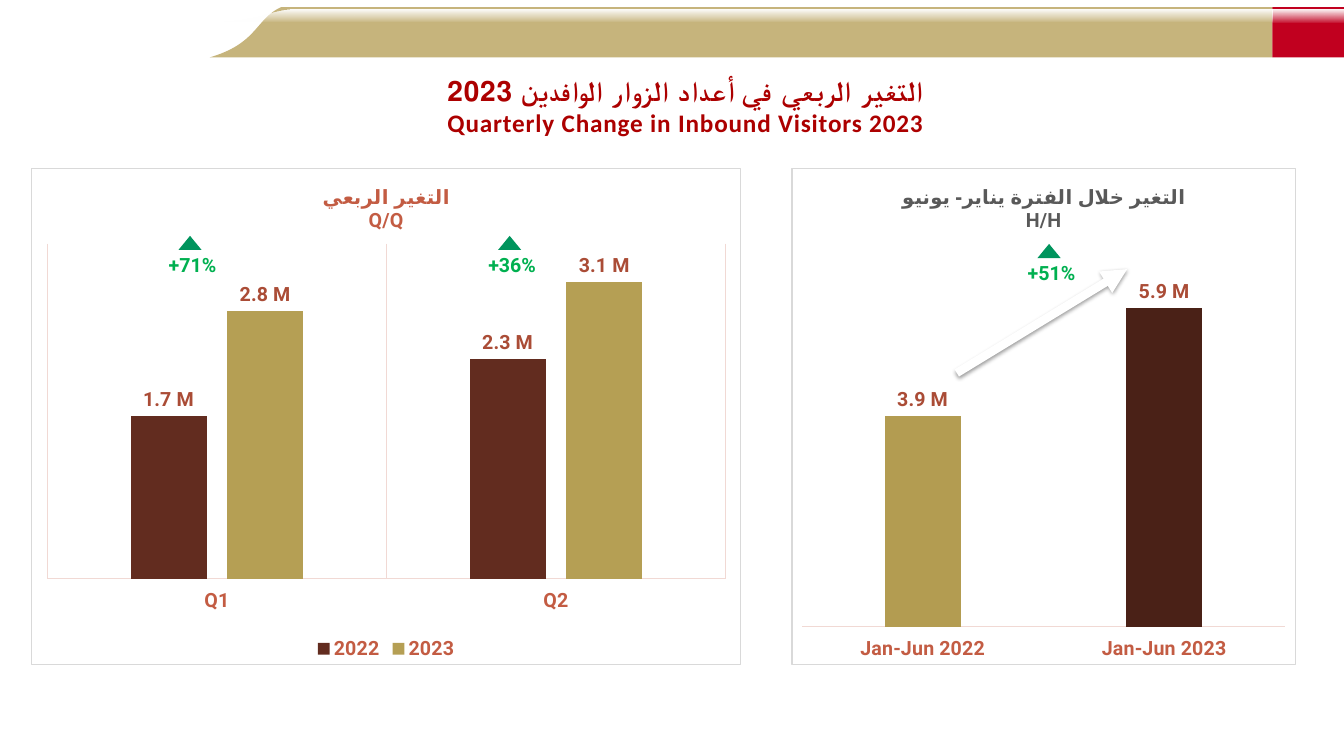
from dataclasses import dataclass
from typing import Any, Optional

from lxml import etree
from pptx import Presentation
from pptx.chart.data import CategoryChartData
from pptx.dml.color import RGBColor
from pptx.enum.chart import XL_CHART_TYPE, XL_LABEL_POSITION, XL_LEGEND_POSITION, XL_TICK_LABEL_POSITION, XL_TICK_MARK
from pptx.enum.shapes import MSO_CONNECTOR, MSO_SHAPE
from pptx.enum.text import PP_ALIGN
from pptx.oxml import parse_xml
from pptx.oxml.ns import nsdecls, qn
from pptx.util import Inches, Pt

COLUMNS = XL_CHART_TYPE.COLUMN_CLUSTERED
OUTSIDE_END = XL_LABEL_POSITION.OUTSIDE_END
BOTTOM = XL_LEGEND_POSITION.BOTTOM
LOW = XL_TICK_LABEL_POSITION.LOW
NO_TICK = XL_TICK_MARK.NONE
CENTER = PP_ALIGN.CENTER

WHITE = RGBColor(0xFF, 0xFF, 0xFF)
SAND = RGBColor(0xC6, 0xB4, 0x7C)
RED = RGBColor(0xC1, 0x00, 0x1F)
TITLE_RED = RGBColor(0xAC, 0x00, 0x00)
GREY = RGBColor(0x59, 0x59, 0x59)
RUST = RGBColor(0xC3, 0x5C, 0x43)
LABEL_RUST = RGBColor(0xAA, 0x4C, 0x36)
AXIS_PINK = RGBColor(0xF1, 0xD9, 0xD4)
BROWN = RGBColor(0x62, 0x2C, 0x1F)
DARK_BROWN = RGBColor(0x4A, 0x21, 0x17)
GOLD = RGBColor(0xB5, 0x9F, 0x54)
DARK_GOLD = RGBColor(0xB3, 0x9C, 0x51)
TEXT_GREEN = RGBColor(0x00, 0xB0, 0x50)
MARK_GREEN = RGBColor(0x00, 0x94, 0x5D)

MILLIONS = '#,##0.0,,\\ "M"'
BOLD_14 = {"name": "Roboto", "size": Pt(14), "bold": True}


@dataclass(frozen=True)
class BarSeries:
    name: str
    values: tuple[int, ...]
    colors: tuple[RGBColor, ...]


@dataclass(frozen=True)
class ColumnPanel:
    left: float
    width: float
    title: tuple[str, str]
    title_color: RGBColor
    categories: tuple[str, ...]
    series: tuple[BarSeries, ...]
    plot_area: tuple[float, float, float, float]
    maximum: int
    grouped: bool


@dataclass(frozen=True)
class Growth:
    left: float
    top: float
    text: str


PANELS = (
    ColumnPanel(7.85, 5, ("التغير خلال الفترة يناير- يونيو", "H/H"), GREY,
                ("Jan-Jun 2022", "Jan-Jun 2023"),
                (BarSeries("Series 1", (3_900_000, 5_900_000), (DARK_GOLD, DARK_BROWN)),),
                (0.02, 0.16, 0.96, 0.764), 7_000_000, False),
    ColumnPanel(0.31, 7.04, ("التغير الربعي", "Q/Q"), RUST, ("Q1", "Q2"),
                (BarSeries("2022", (1_700_000, 2_300_000), (BROWN,)),
                 BarSeries("2023", (2_800_000, 3_100_000), (GOLD,))),
                (0.022, 0.151, 0.957, 0.676), 3_500_000, True),
)
GROWTHS = (Growth(10.16, 2.42, "+51%"), Growth(1.64, 2.34, "+71%"), Growth(4.81, 2.34, "+36%"))


def set_font(font: Any, color: RGBColor, values: dict[str, Any]) -> None:
    for name, value in values.items():
        setattr(font, name, value)
    font.color.rgb = color


def paint(shape: Any, color: Optional[RGBColor]) -> None:
    """Fill the shape, with a white sheen fading downwards when no colour is given."""
    shape.shadow.inherit = False
    shape.line.fill.background()
    if color is not None:
        shape.fill.solid()
        shape.fill.fore_color.rgb = color
        return
    shape.fill.gradient()
    shape.fill.gradient_angle = 270
    for stop, position in zip(shape.fill.gradient_stops, (0, 1)):
        stop.position = position
        stop.color.rgb = WHITE
    last_color = shape.element.spPr.findall(".//" + qn("a:srgbClr"))[-1]
    etree.SubElement(last_color, qn("a:alpha")).set("val", "0")


def add_preset(slide: Any, kind: Any, box: tuple[float, ...], color: Optional[RGBColor]) -> None:
    paint(slide.shapes.add_shape(kind, *map(Inches, box)), color)


def add_swoosh(slide: Any, left: float, top: float, bottom: float, color: Optional[RGBColor]) -> None:
    """Draw a band whose left end is an S curve."""
    right, drop = 12.62, bottom - top
    curve = ((left, bottom), (left + 0.48, bottom - 0.28 * drop),
             (left + 0.45, top + 0.24 * drop), (left + 0.71, top))
    points = [(right, top), (right, bottom)]
    for step in range(25):
        t = step / 24
        weights = ((1 - t) ** 3, 3 * t * (1 - t) ** 2, 3 * t * t * (1 - t), t ** 3)
        points.append(tuple(sum(w * p[axis] for w, p in zip(weights, curve)) for axis in (0, 1)))
    corners = [(Inches(x), Inches(y)) for x, y in points]
    builder = slide.shapes.build_freeform(*corners[0], scale=1.0)
    builder.add_line_segments(corners[1:], close=True)
    paint(builder.convert_to_shape(), color)


def add_header(slide: Any) -> None:
    add_swoosh(slide, 2.08, 0.07, 0.57, SAND)
    add_preset(slide, MSO_SHAPE.RECTANGLE, (12.62, 0.07, 0.71, 0.5), RED)
    add_swoosh(slide, 2.17, 0.09, 0.21, None)
    add_preset(slide, MSO_SHAPE.RECTANGLE, (12.62, 0.09, 0.71, 0.13), None)


def add_title(slide: Any) -> None:
    frame = slide.shapes.add_textbox(*map(Inches, (3.25, 0.68, 7.1, 0.74))).text_frame
    frame.word_wrap = True
    frame.text = "التغير الربعي في أعداد الزوار الوافدين 2023\nQuarterly Change in Inbound Visitors 2023"
    for paragraph, name, size in zip(frame.paragraphs, ("Roboto", "Calibri"), (20, 18)):
        paragraph.alignment = CENTER
        paragraph._p.get_or_add_pPr().set("rtl", "1")
        run = paragraph.runs[0]
        set_font(run.font, TITLE_RED, {"name": name, "size": Pt(size), "bold": True})
        run._r.get_or_add_rPr().set("spc", "60")


def style_frame(chart: Any, plot_area: tuple[float, ...]) -> None:
    """Give the chart its white fill and grey border, and place the inner plot area."""
    chart.element.find(qn("c:chart")).addnext(parse_xml(
        f'<c:spPr {nsdecls("c", "a")}><a:solidFill><a:srgbClr val="FFFFFF"/></a:solidFill>'
        '<a:ln w="9525"><a:solidFill><a:srgbClr val="D9D9D9"/></a:solidFill></a:ln></c:spPr>'))
    plot = chart.element.find(".//" + qn("c:plotArea"))
    for layout in plot.findall(qn("c:layout")):
        plot.remove(layout)
    sizes = "".join(f'<c:{key} val="{value}"/>' for key, value in zip("xywh", plot_area))
    plot.insert(0, parse_xml(
        f'<c:layout {nsdecls("c")}><c:manualLayout><c:layoutTarget val="inner"/>'
        f'<c:xMode val="edge"/><c:yMode val="edge"/>{sizes}</c:manualLayout></c:layout>'))


def style_axes(chart: Any, panel: ColumnPanel) -> None:
    value_axis, category_axis = chart.value_axis, chart.category_axis
    value_axis.minimum_scale, value_axis.maximum_scale = 0, panel.maximum
    value_axis.has_major_gridlines = value_axis.visible = False
    category_axis.major_tick_mark = NO_TICK
    category_axis.tick_label_position = LOW
    category_axis.has_major_gridlines = panel.grouped
    set_font(category_axis.tick_labels.font, RUST, BOLD_14)
    lines = [category_axis.format.line]
    if panel.grouped:
        lines.append(category_axis.major_gridlines.format.line)
    for line in lines:
        line.color.rgb, line.width = AXIS_PINK, Pt(0.75)


def style_series(plot: Any, panel: ColumnPanel) -> None:
    plot.gap_width, plot.overlap, plot.vary_by_categories = 219, -27, False
    for series, bars in zip(plot.series, panel.series):
        series.format.fill.solid()
        series.format.fill.fore_color.rgb = bars.colors[0]
        for index, color in enumerate(bars.colors[1:], 1):
            fill = series.points[index].format.fill
            fill.solid()
            fill.fore_color.rgb = color
        labels = series.data_labels
        labels.show_value, labels.position = True, OUTSIDE_END
        labels.number_format, labels.number_format_is_linked = MILLIONS, False
        set_font(labels.font, LABEL_RUST, BOLD_14)


def add_panel(slide: Any, panel: ColumnPanel) -> None:
    data = CategoryChartData(number_format=MILLIONS)
    data.categories = panel.categories
    for bars in panel.series:
        data.add_series(bars.name, bars.values)
    box = map(Inches, (panel.left, 1.67, panel.width, 4.93))
    chart = slide.shapes.add_chart(COLUMNS, *box, data).chart
    style_frame(chart, panel.plot_area)
    set_font(chart.font, BROWN, {"name": "Roboto", "size": Pt(14)})
    frame = chart.chart_title.text_frame
    frame.text = "\n".join(panel.title)
    for paragraph in frame.paragraphs:
        set_font(paragraph.runs[0].font, panel.title_color, BOLD_14)
    chart.chart_title.include_in_layout = False
    chart.has_legend = panel.grouped
    if panel.grouped:
        chart.legend.position, chart.legend.include_in_layout = BOTTOM, False
        set_font(chart.legend.font, RUST, BOLD_14)
    style_axes(chart, panel)
    style_series(chart.plots[0], panel)


def add_growth(slide: Any, growth: Growth) -> None:
    add_preset(slide, MSO_SHAPE.ISOSCELES_TRIANGLE, (growth.left + 0.13, growth.top, 0.23, 0.14), MARK_GREEN)
    box = map(Inches, (growth.left, growth.top + 0.17, 0.54, 0.24))
    frame = slide.shapes.add_textbox(*box).text_frame
    for side in ("left", "top", "right", "bottom"):
        setattr(frame, f"margin_{side}", 0)
    frame.word_wrap = True
    frame.text = growth.text
    frame.paragraphs[0].alignment = CENTER
    set_font(frame.paragraphs[0].runs[0].font, TEXT_GREEN, BOLD_14)


def add_rising_arrow(slide: Any) -> None:
    arrow = slide.shapes.add_connector(MSO_CONNECTOR.STRAIGHT, *map(Inches, (9.49, 3.7, 11.18, 2.67)))
    arrow.line.color.rgb, arrow.line.width = WHITE, Pt(6)
    etree.SubElement(arrow.line._get_or_add_ln(), qn("a:tailEnd")).set("type", "triangle")
    arrow.element.spPr.append(parse_xml(
        f'<a:effectLst {nsdecls("a")}><a:outerShdw blurRad="39370" dist="20320" dir="5400000" rotWithShape="0">'
        '<a:srgbClr val="000000"><a:alpha val="38000"/></a:srgbClr></a:outerShdw></a:effectLst>'))


def main() -> None:
    presentation = Presentation()
    presentation.slide_width, presentation.slide_height = Inches(13.33), Inches(7.5)
    slide = presentation.slides.add_slide(presentation.slide_layouts[6])
    add_header(slide)
    add_title(slide)
    for panel in PANELS:
        add_panel(slide, panel)
    add_rising_arrow(slide)
    for growth in GROWTHS:
        add_growth(slide, growth)
    presentation.save("out.pptx")


if __name__ == "__main__":
    main()
